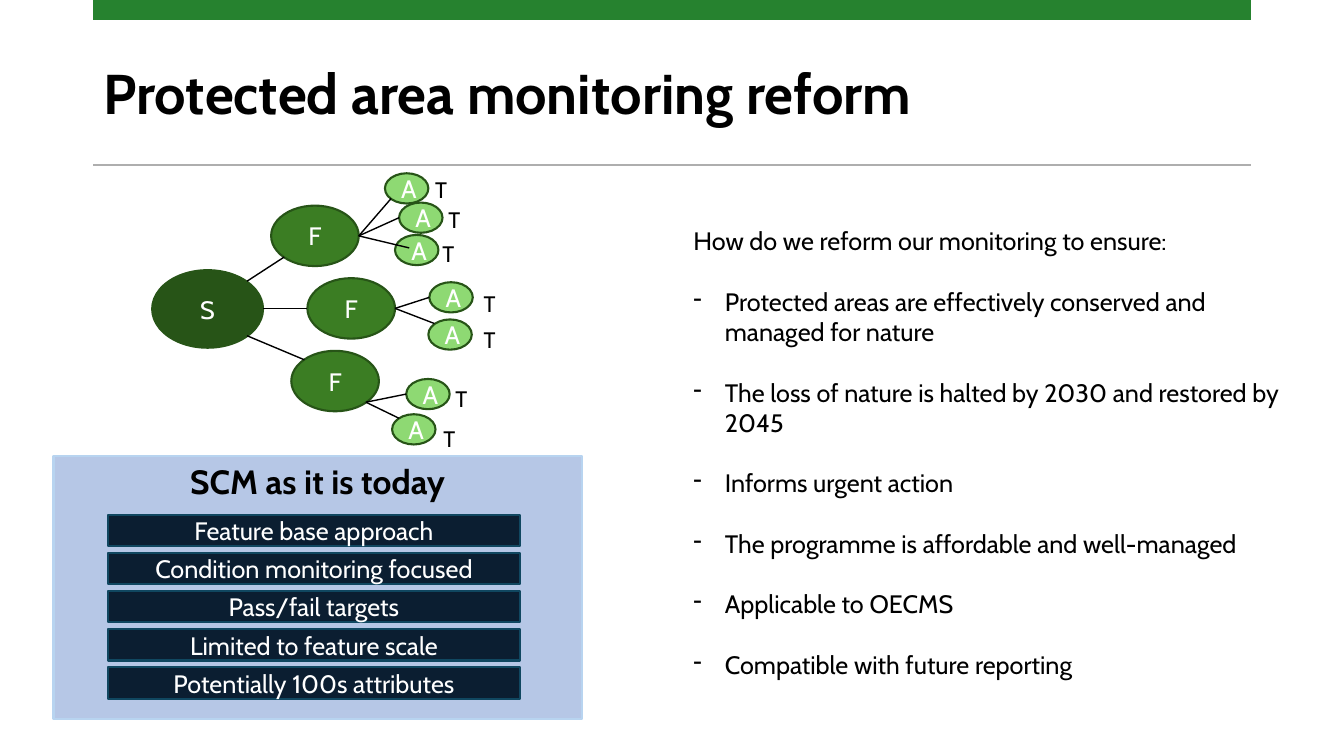
"""Build the protected area monitoring reform slide."""
from lxml import etree
from pptx import Presentation
from pptx.dml.color import RGBColor
from pptx.enum.shapes import MSO_CONNECTOR, MSO_SHAPE
from pptx.enum.text import MSO_ANCHOR, PP_ALIGN
from pptx.oxml.ns import qn
from pptx.util import Pt

RECT, ELLIPSE = MSO_SHAPE.RECTANGLE, MSO_SHAPE.OVAL
STRAIGHT = MSO_CONNECTOR.STRAIGHT
TOP, MIDDLE = MSO_ANCHOR.TOP, MSO_ANCHOR.MIDDLE
LEFT, CENTER = PP_ALIGN.LEFT, PP_ALIGN.CENTER

FONT = "Cabin"
COLORS = {
    "text": "000000", "light": "FFFFFF", "band": "26822F", "rule": "AEAEAE",
    "site": "275417", "feature": "3B7D23", "attribute": "8ED973",
    "panel": "B6C7E6", "panel_edge": "B8D4F0", "bar": "0B1E31", "bar_edge": "104760",
}

SITE = (108.7, 193, 79.2, 55.4)
FEATURE_SIZE = (62.6, 43.2)
ATTRIBUTE_SIZE = (31, 21.6)
TARGET_SIZE = (24.5, 20.2)
# Each branch: feature corner, trunk line, hub, then attribute corner, target corner, line end.
BRANCHES = [
    ((193.7, 146.9), (176.4, 200.9, 203, 183.6), (256.3, 168.5), [
        ((275, 123.8), (303.8, 122.4), (279.4, 141.8)),
        ((285.1, 144.7), (313.2, 144), (285.1, 155.5)),
        ((282.2, 167.8), (308.9, 167.8), (292.3, 177.1))]),
    ((219.6, 198.7), (187.9, 220.3, 219.6, 220.3), (282.2, 220.3), [
        ((306.7, 201.6), (338.4, 203.8), (306.7, 212.4)),
        ((306, 228.2), (338.4, 229.7), (310.3, 231.1))]),
    ((208.1, 250.6), (176.4, 239.8, 217.4, 257), (261.4, 287.3), [
        ((290.2, 270.7), (318.2, 271.4), (290.2, 281.5)),
        ((280.1, 295.9), (309.6, 300.2), (285.1, 298.8))]),
]
BARS = ["Feature base approach", "Condition monitoring focused", "Pass/fail targets",
        "Limited to feature scale", "Potentially 100s attributes"]
BAR_TOP, BAR_PITCH = 367.9, 27.2
QUESTION = "How do we reform our monitoring to ensure:"
AIMS = [
    "Protected areas are effectively conserved and managed for nature",
    "The loss of nature is halted by 2030 and restored by 2045",
    "Informs urgent action",
    "The programme is affordable and well-managed",
    "Applicable to OECMS",
    "Compatible with future reporting",
]


def rgb(name):
    """Return the named colour."""
    return RGBColor.from_string(COLORS[name])


class SlideBuilder:
    """Hold the style and the current slide."""

    def __init__(self, s):
        """Start drawing on the slide itself."""
        self.s = s
        self.shapes = s.shapes

    def style(self, p, size, color="text", bold=False, align=LEFT):
        """Format a paragraph and its runs."""
        p.alignment = align
        for r in p.runs:
            r.font.name, r.font.size, r.font.bold = FONT, Pt(size), bold
            r.font.color.rgb = rgb(color)

    def title(self, text, box):
        """Place and format the title placeholder."""
        sp = self.s.shapes.title
        sp.left, sp.top, sp.width, sp.height = map(Pt, box)
        tf = sp.text_frame
        tf.text, tf.vertical_anchor = text, MIDDLE
        tf.paragraphs[0].line_spacing = 0.9
        self.style(tf.paragraphs[0], 40, bold=True)

    def shape(self, kind, box, fill, edge=None, text="", size=18,
              color="light", bold=False, anchor=MIDDLE):
        """Add a filled shape with centred text."""
        sp = self.shapes.add_shape(kind, *map(Pt, box))
        sp.shadow.inherit = False
        sp.fill.solid()
        sp.fill.fore_color.rgb = rgb(fill)
        if edge:
            sp.line.color.rgb, sp.line.width = rgb(edge), Pt(1.5)
        else:
            sp.line.fill.background()
        tf = sp.text_frame
        tf.text, tf.vertical_anchor = text, anchor
        self.style(tf.paragraphs[0], size, color, bold, CENTER)

    def line(self, start, end, color="text", width=1):
        """Add a straight line."""
        c = self.shapes.add_connector(STRAIGHT, *map(Pt, (*start, *end)))
        c.line.color.rgb, c.line.width = rgb(color), Pt(width)
        etree.SubElement(c._element.spPr, qn("a:effectLst"))

    def text(self, box, text, size):
        """Add a text box and return its text frame."""
        tf = self.shapes.add_textbox(*map(Pt, box)).text_frame
        tf.word_wrap, tf.text = True, text
        self.style(tf.paragraphs[0], size)
        return tf

    def dashes(self, tf, items, size, gap, indent):
        """Append dashed paragraphs to a text frame."""
        for item in items:
            p = tf.add_paragraph()
            p.text = item
            pPr = p._p.get_or_add_pPr()
            pPr.set("marL", str(Pt(indent)))
            pPr.set("indent", str(-Pt(indent)))
            etree.SubElement(pPr, qn("a:buChar"), char="-")
            p.space_before = Pt(gap)
            self.style(p, size)

    def tree(self):
        """Draw the site, feature, attribute and target tree as a group."""
        self.shapes = self.s.shapes.add_group_shape().shapes
        self.shape(ELLIPSE, SITE, "site", "site", "S")
        for feature, trunk, hub, leaves in BRANCHES:
            self.shape(ELLIPSE, feature + FEATURE_SIZE, "feature", "site", "F")
            self.line(trunk[:2], trunk[2:])
            for attribute, target, end in leaves:
                self.shape(ELLIPSE, attribute + ATTRIBUTE_SIZE, "attribute", "site", "A")
                self.text(target + TARGET_SIZE, "T", 16)
                self.line(hub, end)
        self.shapes = self.s.shapes


def main():
    """Build and save the slide."""
    prs = Presentation()
    prs.slide_width, prs.slide_height = Pt(960), Pt(540)
    b = SlideBuilder(prs.slides.add_slide(prs.slide_layouts[5]))
    b.title("Protected area monitoring reform", (66.5, 26.6, 827, 85))
    b.line((66.5, 118.1), (893.5, 118.1), "rule", 1.5)
    b.tree()
    b.shape(RECT, (38.2, 325.6, 377.3, 188), "panel", "panel_edge",
            "SCM as it is today", 24, "text", True, TOP)
    for i, label in enumerate(BARS):
        b.shape(RECT, (77, BAR_TOP + i * BAR_PITCH, 294.5, 22.3), "bar", "bar_edge", label)
    tf = b.text((488.2, 157.7, 444.2, 356.4), QUESTION, 18)
    b.dashes(tf, AIMS, 18, 21.6, 22.5)
    b.shape(RECT, (66.5, 0, 827, 14.2), "band")
    prs.save("out.pptx")


if __name__ == "__main__":
    main()
